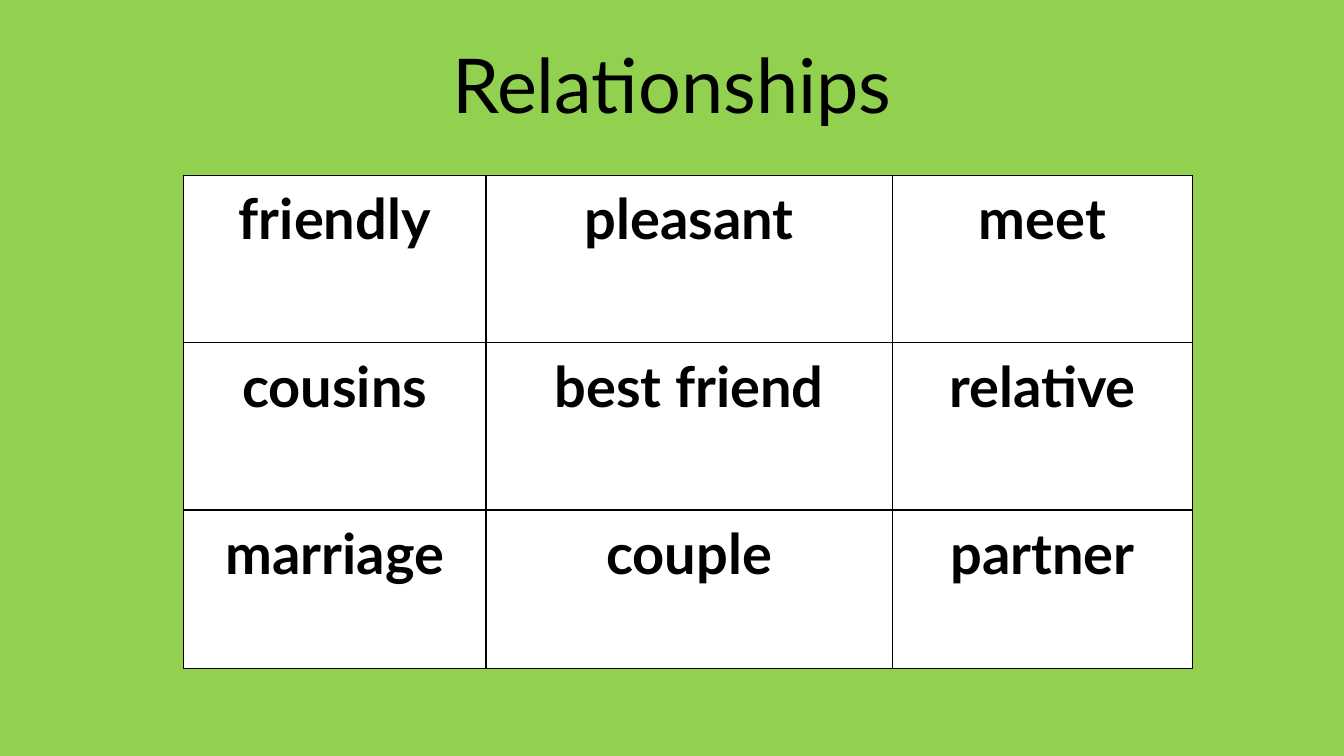
from lxml import etree
from pptx import Presentation
from pptx import util as u
from pptx.dml.color import RGBColor
from pptx.enum import text
from pptx.oxml.ns import qn

WORDS = [
    ["friendly", "pleasant", "meet"],
    ["cousins", "best friend", "relative"],
    ["marriage", "couple", "partner"],
]
COL_WIDTHS = [3, 4.03, 2.98]
ROW_HEIGHTS = [1.66, 1.66, 1.57]
BLACK, WHITE, GREEN = "000000", "FFFFFF", "92D050"


def paint(fill, color):
    fill.solid()
    fill.fore_color.rgb = RGBColor.from_string(color)


def write(tf, words, size, bold=False):
    """Put one centred run into the frame's first paragraph."""
    p = tf.paragraphs[0]
    p.alignment = text.PP_ALIGN.CENTER
    r = p.add_run()
    r.text = words
    r.font.name = "Lato"
    r.font.size = u.Pt(size)
    r.font.bold = bold
    paint(r.font.fill, BLACK)
    return p


prs = Presentation()
prs.slide_width, prs.slide_height = u.Inches(13.33), u.Inches(7.5)
s = prs.slides.add_slide(prs.slide_layouts[6])
paint(s.background.fill, GREEN)

# Title, centred on the slide
title_width = u.Inches(11.5)
title = s.shapes.add_textbox((prs.slide_width - title_width) // 2, u.Inches(0.32),
                             title_width, u.Inches(1.02))
tf = title.text_frame
tf.word_wrap = True
tf.vertical_anchor = text.MSO_ANCHOR.BOTTOM
write(tf, "Relationships", 54).line_spacing = 0.9

# Vocabulary table
table = s.shapes.add_table(len(ROW_HEIGHTS), len(COL_WIDTHS), u.Inches(1.82), u.Inches(1.74),
                           u.Inches(sum(COL_WIDTHS)), u.Inches(sum(ROW_HEIGHTS))).table
table.first_row = table.horz_banding = False
for column, width in zip(table.columns, COL_WIDTHS):
    column.width = u.Inches(width)
for row, height, words in zip(table.rows, ROW_HEIGHTS, WORDS):
    row.height = u.Inches(height)
    for cell, word in zip(row.cells, words):
        cell.margin_left = cell.margin_right = u.Inches(0.18)
        cell.margin_top = cell.margin_bottom = u.Inches(0.09)
        write(cell.text_frame, word, 40, bold=True)
        tcPr = cell._tc.get_or_add_tcPr()
        for side in ("lnL", "lnR", "lnT", "lnB"):
            ln = etree.SubElement(tcPr, qn(f"a:{side}"), w=str(u.Pt(1)))
            line_fill = etree.SubElement(ln, qn("a:solidFill"))
            etree.SubElement(line_fill, qn("a:srgbClr"), val=BLACK)
        paint(cell.fill, WHITE)

prs.save("out.pptx")
